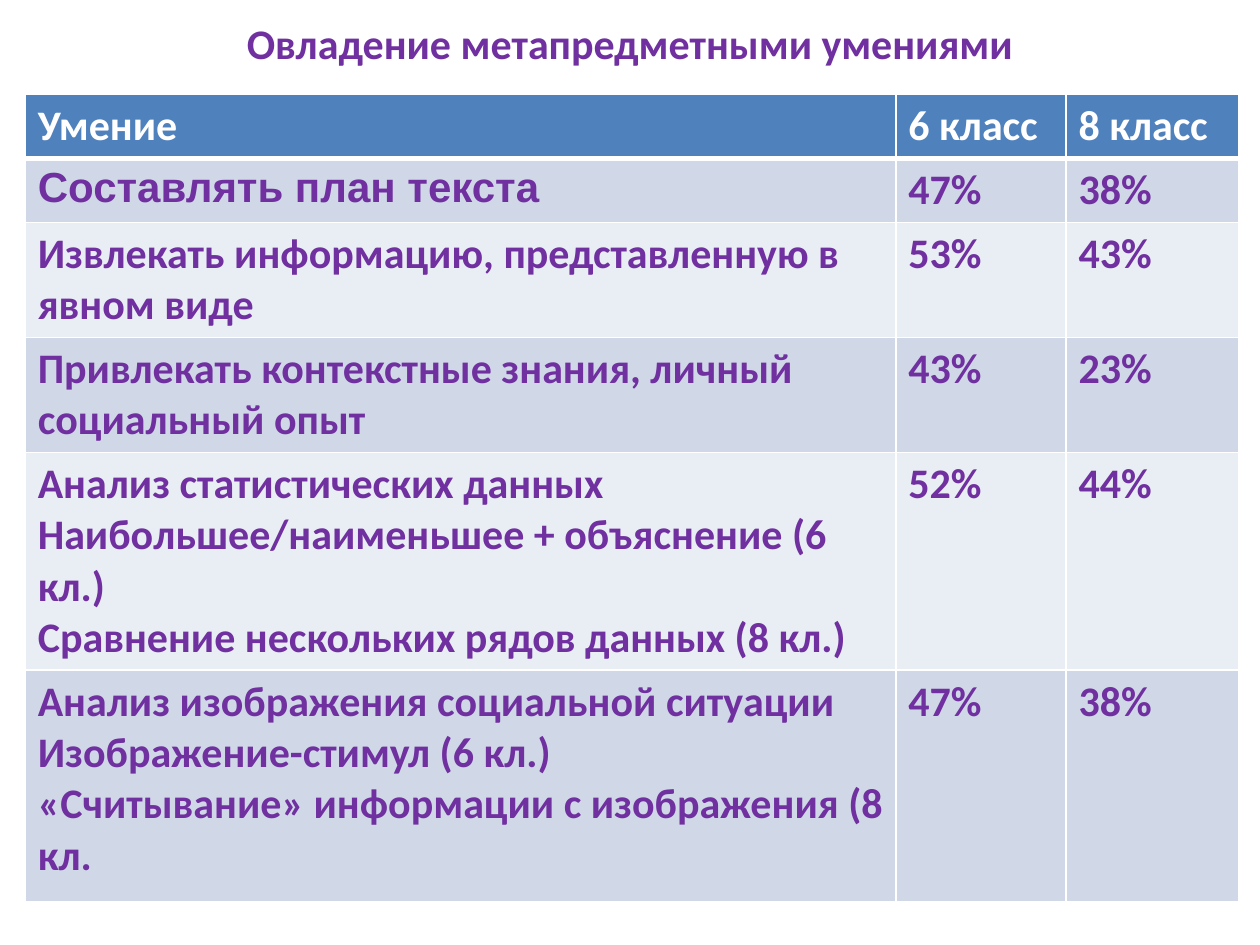
from lxml.etree import SubElement
from pptx import Presentation
from pptx.dml.color import RGBColor
from pptx.enum.text import MSO_ANCHOR, PP_ALIGN
from pptx.oxml.ns import qn
from pptx.util import Inches, Pt

COLORS = {
    "purple": "7030A0",
    "white": "FFFFFF",
    "header": "4F81BD",
    "odd_row": "D0D8E8",
    "even_row": "E9EDF4",
}
COLUMN_WIDTHS = [6.91, 1.35, 1.37]
ROW_HEIGHTS = [0.48, 0.48, 0.87, 0.87, 1.64, 1.84]
SKILLS = [
    ("Умение", "6 класс", "8 класс"),
    ("Составлять план текста", "47%", "38%"),
    ("Извлекать информацию, представленную в явном виде", "53%", "43%"),
    ("Привлекать контекстные знания, личный социальный опыт", "43%", "23%"),
    (
        "Анализ статистических данных\n"
        "Наибольшее/наименьшее + объяснение (6 кл.)\n"
        "Сравнение нескольких рядов данных (8 кл.)",
        "52%",
        "44%",
    ),
    (
        "Анализ изображения социальной ситуации\n"
        "Изображение-стимул (6 кл.)\n"
        "«Считывание» информации с изображения (8 кл.",
        "47%",
        "38%",
    ),
]


def rgb(name):
    return RGBColor.from_string(COLORS[name])


def format_text(text_frame, color, typeface="Calibri"):
    for paragraph in text_frame.paragraphs:
        font = paragraph.font
        font.name = typeface
        font.size = Pt(24)
        font.bold = True
        font.color.rgb = rgb(color)


def set_borders(cell, bottom_width):
    properties = cell._tc.get_or_add_tcPr()
    widths = {"lnL": 1, "lnR": 1, "lnT": 1, "lnB": bottom_width}
    for side, width in widths.items():
        line = SubElement(properties, qn(f"a:{side}"), w=str(Pt(width)))
        fill = SubElement(line, qn("a:solidFill"))
        SubElement(fill, qn("a:srgbClr"), val=COLORS["white"])


def fill_cell(cell, text, fill, color, typeface, bottom_width):
    cell.text = text
    format_text(cell.text_frame, color, typeface)
    set_borders(cell, bottom_width)
    cell.fill.solid()
    cell.fill.fore_color.rgb = rgb(fill)


def add_title(slide, text):
    title = slide.shapes.title
    title.left, title.top = Inches(0.5), Inches(0)
    title.width, title.height = Inches(9), Inches(0.68)
    title.text_frame.text = text
    title.text_frame.vertical_anchor = MSO_ANCHOR.MIDDLE
    title.text_frame.paragraphs[0].alignment = PP_ALIGN.CENTER
    format_text(title.text_frame, "purple")


def add_skills_table(slide):
    table = slide.shapes.add_table(
        len(SKILLS), len(COLUMN_WIDTHS), Inches(0.2), Inches(0.75),
        Inches(sum(COLUMN_WIDTHS)), Inches(sum(ROW_HEIGHTS)),
    ).table
    for column, width in zip(table.columns, COLUMN_WIDTHS):
        column.width = Inches(width)
    for row, height in zip(table.rows, ROW_HEIGHTS):
        row.height = Inches(height)
    for r, skill in enumerate(SKILLS):
        is_header = r == 0
        band = "odd_row" if r % 2 else "even_row"
        for c, text in enumerate(skill):
            fill_cell(
                table.cell(r, c),
                text,
                fill="header" if is_header else band,
                color="white" if is_header else "purple",
                typeface="Arial" if (r, c) == (1, 0) else "Calibri",
                bottom_width=3 if is_header else 1,
            )


def main():
    presentation = Presentation()
    presentation.slide_width = Inches(10)
    presentation.slide_height = Inches(7.5)
    slide = presentation.slides.add_slide(presentation.slide_layouts[5])
    add_title(slide, "Овладение метапредметными умениями")
    add_skills_table(slide)
    presentation.save("out.pptx")


if __name__ == "__main__":
    main()
